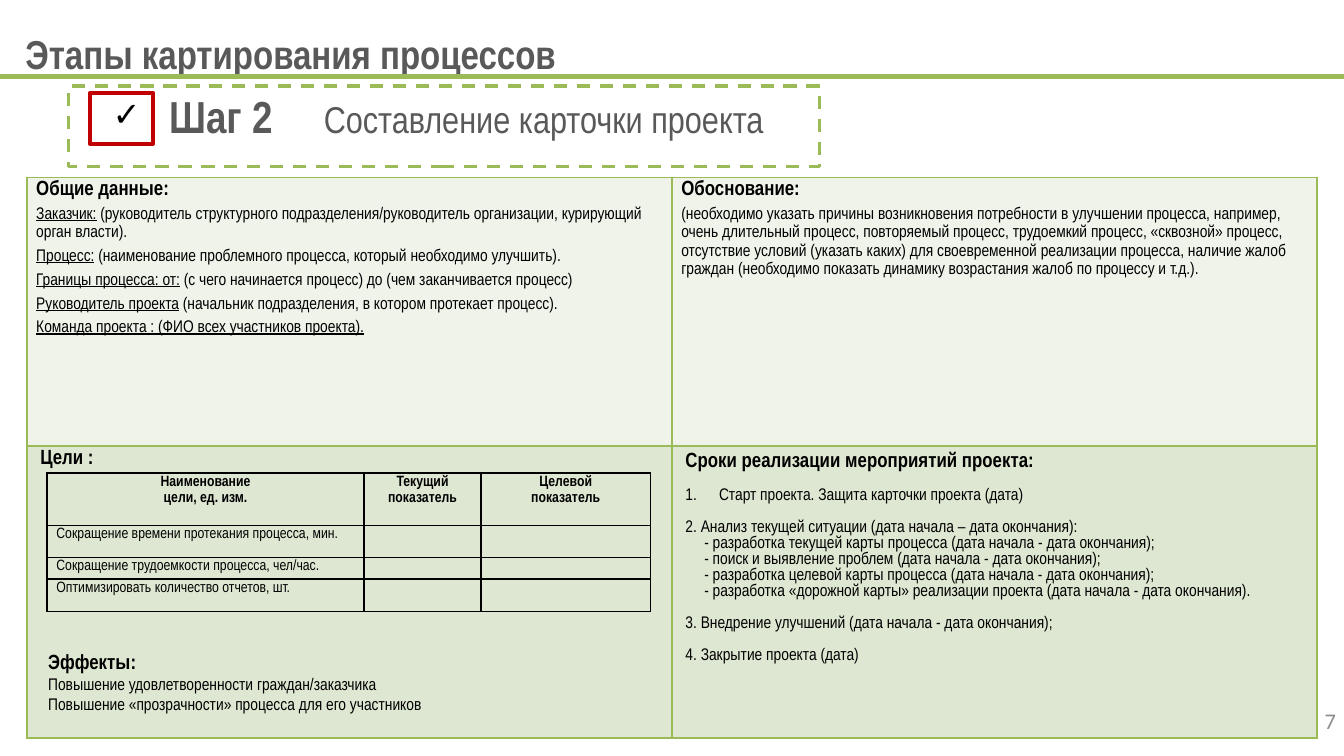
from dataclasses import dataclass

from pptx import Presentation
from pptx import util as u
from pptx.dml.color import RGBColor
from pptx.enum import dml, shapes, text
from pptx.oxml import xmlchemy as xc

GREEN = RGBColor(0x9B, 0xBB, 0x59)
PALE = RGBColor(0xEF, 0xF3, 0xEA)
SAGE = RGBColor(0xDE, 0xE7, 0xD1)
RED = RGBColor(0xC0, 0x00, 0x00)
GRAY = RGBColor(0x59, 0x59, 0x59)
SILVER = RGBColor(0x8C, 0x8C, 0x8C)
BLACK = RGBColor(0, 0, 0)
NARROW = "Arial Narrow"
LEFT, MID, RIGHT = text.PP_ALIGN.LEFT, text.PP_ALIGN.CENTER, text.PP_ALIGN.RIGHT
WIDE = 10
HIGH = WIDE * 9 / 16
Box = tuple[float, float, float, float]


@dataclass
class Run:
    words: str
    size: float = 9
    bold: bool = False
    under: bool = False
    color: RGBColor = BLACK
    font: str = NARROW
    track: int = 0


@dataclass
class Para:
    runs: list[Run]
    lead: float = 1.0
    before: float = 0
    left: float = 0
    hang: float = 0
    align: text.PP_ALIGN = LEFT
    marks: tuple = ()


@dataclass
class Cell:
    paras: list[Para]
    fill: RGBColor | None = None
    side: float = 0.07
    top: float = 0


def node(name: str, **attrs: str):
    item = xc.OxmlElement(name)
    for key, value in attrs.items():
        item.set(key, value)
    return item


def write(frame, paras: list[Para]) -> None:
    for i, para in enumerate(paras):
        p = frame.paragraphs[0] if i == 0 else frame.add_paragraph()
        p.alignment, p.line_spacing = para.align, para.lead
        if para.before:
            p.space_before = u.Pt(para.before)
        props = p._p.get_or_add_pPr()
        props.set("marL", str(u.Inches(para.left)))
        props.set("indent", str(-u.Inches(para.hang)))
        for name, attrs in para.marks:
            mark = node(name, **attrs)
            if name == "a:buClr":
                mark.append(node("a:srgbClr", val=str(BLACK)))
            props.append(mark)
        for part in para.runs:
            r = p.add_run()
            r.text = part.words
            f = r.font
            f.size, f.name, f.bold = u.Pt(part.size), part.font, part.bold
            f.underline, f.color.rgb = part.under, part.color
            if part.track:
                f._element.set("spc", str(part.track))


def add_text(slide, box: Box, paras: list[Para], anchor=text.MSO_ANCHOR.TOP) -> None:
    frame = slide.shapes.add_textbox(*map(u.Inches, box)).text_frame
    frame.word_wrap, frame.vertical_anchor = True, anchor
    write(frame, paras)


def add_frame(slide, box: Box, color: RGBColor, width: float, dash=None) -> None:
    shape = slide.shapes.add_shape(shapes.MSO_SHAPE.RECTANGLE, *map(u.Inches, box))
    shape.shadow.inherit = False
    shape.fill.background()
    shape.line.color.rgb, shape.line.width = color, u.Pt(width)
    if dash:
        shape.line.dash_style = dash


def edge(cell, color: RGBColor) -> None:
    props = cell._tc.get_or_add_tcPr()
    for side in ("L", "R", "T", "B"):
        line, fill = node(f"a:ln{side}", w=str(u.Pt(1))), node("a:solidFill")
        fill.append(node("a:srgbClr", val=str(color)))
        line.append(fill)
        props.append(line)


def add_grid(slide, spot: tuple[float, float], cols: list[float], rows: list[float],
             color: RGBColor, cells: list[list[Cell]]) -> None:
    box = (*spot, sum(cols), sum(rows))
    grid = slide.shapes.add_table(len(rows), len(cols), *map(u.Inches, box)).table
    grid.first_row = grid.horz_banding = False
    for col, width in zip(grid.columns, cols):
        col.width = u.Inches(width)
    for row, height, line in zip(grid.rows, rows, cells):
        row.height = u.Inches(height)
        for cell, data in zip(row.cells, line):
            cell.margin_left = cell.margin_right = u.Inches(data.side)
            cell.margin_top = cell.margin_bottom = u.Inches(data.top)
            edge(cell, color)
            if data.fill:
                cell.fill.solid()
                cell.fill.fore_color.rgb = data.fill
            else:
                cell.fill.background()
            write(cell.text_frame, data.paras)
            if not data.paras:
                cell.text_frame.paragraphs[0]._p.append(node("a:endParaRPr", sz="800"))


def head(words: str, lead: float = 1.15, left: float = 0) -> Para:
    return Para([Run(words, 11, True)], lead, left=left)


def field(label: str, note: str = "") -> Para:
    runs = [Run(label, under=True)] + ([Run(note)] if note else [])
    return Para(runs, 1.15, 2.9)


def step(words: str, before: float = 0, left: float = 0) -> Para:
    return Para([Run(words)], before=before, left=left)


def title(*lines: str) -> Cell:
    return Cell([Para([Run(line, 8, True)], 1.15, align=MID) for line in lines])


def goal(words: str) -> list[Cell]:
    return [Cell([Para([Run(words, 8)], 1.15)]), Cell([]), Cell([])]


FACTS = [
    head("Общие данные:"),
    field("Заказчик:", " (руководитель структурного подразделения/руководитель организации, курирующий орган власти)."),
    field("Процесс:", " (наименование проблемного процесса, который необходимо улучшить)."),
    field("Границы процесса: от:", " (с чего начинается процесс) до (чем заканчивается процесс)"),
    field("Руководитель проекта", " (начальник подразделения, в котором протекает процесс)."),
    field("Команда проекта : (ФИО всех участников проекта)."),
]
CAUSE = [
    head("Обоснование:"),
    Para([Run("(необходимо указать причины возникновения потребности в улучшении процесса, например, очень длительный процесс, повторяемый процесс, трудоемкий процесс, «сквозной» процесс, отсутствие условий (указать каких) для своевременной реализации процесса, наличие жалоб граждан (необходимо показать динамику возрастания жалоб по процессу и т.д.).")], 1.15, 2.9),
]
TASKS = ["разработка текущей карты процесса (дата начала - дата окончания);",
         "поиск и выявление проблем (дата начала - дата окончания);",
         "разработка целевой карты процесса (дата начала - дата окончания);",
         "разработка «дорожной карты» реализации проекта (дата начала - дата окончания)."]
GAP = 8.6
DATES = [
    head("Сроки реализации мероприятий проекта:", 1.0),
    Para([Run("Старт проекта. Защита карточки проекта (дата)")], 1.0, GAP, 0.25, 0.25,
         marks=(("a:buAutoNum", {"type": "arabicPeriod"}),)),
    step("2. Анализ текущей ситуации (дата начала – дата окончания):", GAP),
    *[step(f"- {task}", left=0.14) for task in TASKS],
    step("3. Внедрение улучшений (дата начала - дата окончания);", GAP),
    step("4. Закрытие проекта (дата)", GAP),
]
CARD = [[Cell(FACTS, PALE), Cell(CAUSE, PALE)],
        [Cell([head("Цели :", left=0.03)], SAGE), Cell(DATES, SAGE, 0.1, 0.05)]]
GOALS = [[title("Наименование", "цели, ед. изм."), title("Текущий", "показатель"),
          title("Целевой", "показатель")],
         goal("Сокращение времени протекания процесса, мин."),
         goal("Сокращение трудоемкости процесса, чел/час."),
         goal("Оптимизировать количество отчетов, шт.")]
TICK = (("a:buClr", {}), ("a:buSzPct", {"val": "75000"}),
        ("a:buFont", {"typeface": "Calibri"}), ("a:buChar", {"char": "✓"}))


def main() -> None:
    deck = Presentation()
    deck.slide_width, deck.slide_height = u.Inches(WIDE), u.Inches(HIGH)
    slide = deck.slides.add_slide(deck.slide_layouts[6])
    center = text.MSO_ANCHOR.MIDDLE
    add_text(slide, (0.09, 0.17, 9, 0.46),
             [Para([Run("Этапы картирования процессов", 21.6, True, color=GRAY)])], center)
    rule = slide.shapes.add_connector(shapes.MSO_CONNECTOR.STRAIGHT, 0, u.Inches(0.57),
                                      u.Inches(WIDE), u.Inches(0.57))
    rule.line.color.rgb, rule.line.width = GREEN, u.Pt(3)
    rule._element.spPr.append(node("a:effectLst"))
    add_text(slide, (7.71, 5.21, 2.33, 0.3),
             [Para([Run("7", 12, color=SILVER, font="Calibri")], align=RIGHT)], center)
    add_frame(slide, (0.67, 0.69, 0.47, 0.38), RED, 2)
    add_text(slide, (0.74, 0.61, 5.68, 0.5), [Para([
        Run("Шаг 2", 24, True, color=GRAY), Run(" ", 24, True, color=GRAY, track=2200),
        Run("Составление карточки проекта", 20, color=GRAY)], left=0.42, hang=0.42, marks=TICK)])
    add_frame(slide, (0.51, 0.64, 5.59, 0.6), GREEN, 1.75, dml.MSO_LINE.DASH)
    add_grid(slide, (0.2, 1.32), [4.8, 4.8], [2, 2.17], GREEN, CARD)
    add_grid(slide, (0.35, 3.52), [2.36, 0.87, 1.26], [0.39, 0.24, 0.16, 0.24], BLACK, GOALS)
    add_text(slide, (0.26, 4.78, 4.05, 0.59), [
        head("Эффекты:", 1.0), step("Повышение удовлетворенности граждан/заказчика"),
        step("Повышение «прозрачности» процесса для его участников")])
    deck.save("out.pptx")


if __name__ == "__main__":
    main()
